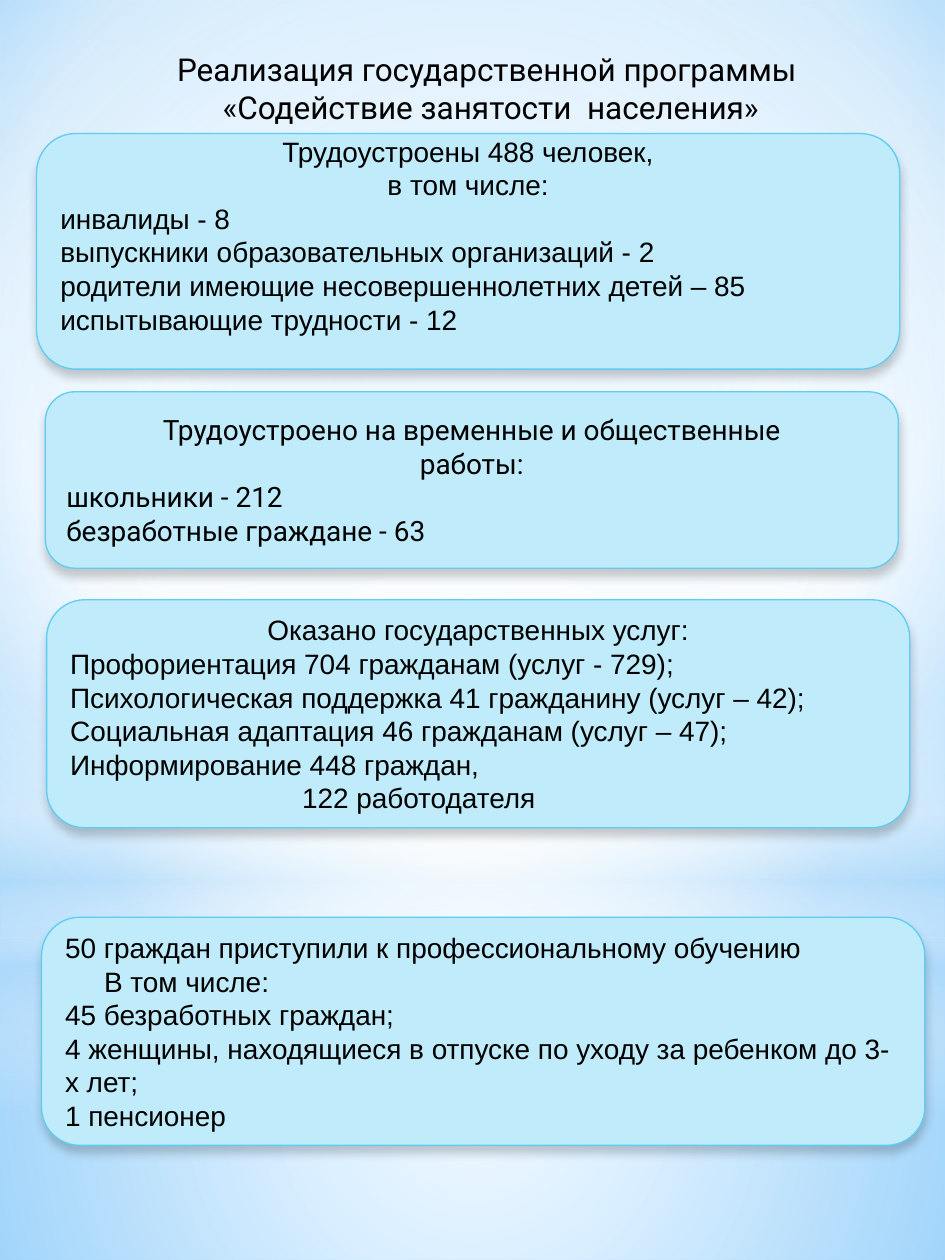
from lxml import etree
from pptx import Presentation
from pptx.dml.color import RGBColor
from pptx.enum.shapes import MSO_SHAPE as SHAPE
from pptx.enum.text import MSO_ANCHOR as ANCHOR, MSO_AUTO_SIZE as AUTO_SIZE, PP_ALIGN as ALIGN
from pptx.oxml.ns import qn
from pptx.util import Inches, Pt

BLACK = RGBColor(0x00, 0x00, 0x00)
WHITE = RGBColor(0xFF, 0xFF, 0xFF)
PANEL = RGBColor(0xBF, 0xEB, 0xFA)
BORDER = RGBColor(0x5E, 0xCC, 0xF3)
HAZE = RGBColor(0xB4, 0xDC, 0xFA)
SKY = RGBColor(0x9E, 0xD5, 0xFF)
DEEP_SKY = RGBColor(0x5B, 0xB9, 0xFF)
CENTER = (50, 50, 50, 50)
TITLE_ONLY = 5


def add_color(parent, color, alpha):
    node = etree.SubElement(parent, qn("a:srgbClr"), val=str(color))
    etree.SubElement(node, qn("a:alpha"), val=str(alpha * 1000))


def set_gradient(properties, stops, focus=None):
    """Swap a solid fill for a gradient: circular around focus, else downwards."""
    gradient = etree.Element(qn("a:gradFill"), rotWithShape="1")
    stop_list = etree.SubElement(gradient, qn("a:gsLst"))
    for position, color, alpha in stops:
        stop = etree.SubElement(stop_list, qn("a:gs"), pos=str(position * 1000))
        add_color(stop, color, alpha)
    if focus:
        circle = etree.SubElement(gradient, qn("a:path"), path="circle")
        sides = {side: str(value * 1000) for side, value in zip("ltrb", focus)}
        etree.SubElement(circle, qn("a:fillToRect"), **sides)
    else:
        etree.SubElement(gradient, qn("a:lin"), ang="5400000", scaled="0")
    properties.replace(properties.find(qn("a:solidFill")), gradient)


class Poster:
    def __init__(self, slide):
        self.slide = slide

    def background(self, stops, focus):
        self.slide.background.fill.solid()
        set_gradient(self.slide.element.find(".//" + qn("p:bgPr")), stops, focus)

    def glow(self, kind, top, height, stops, focus=None):
        glow = self.slide.shapes.add_shape(
            kind, 0, Inches(top), Inches(7.5), Inches(height))
        glow.shadow.inherit = False
        glow.fill.solid()
        set_gradient(glow.element.spPr, stops, focus)
        glow.line.fill.background()

    def fill_text(self, frame, lines, font, size, centered, indents=None):
        frame.word_wrap = True
        frame.text = "\n".join(lines)
        for index, paragraph in enumerate(frame.paragraphs):
            paragraph.alignment = ALIGN.CENTER if index < centered else ALIGN.LEFT
            if indents and index in indents:
                paragraph._p.get_or_add_pPr().set("marL", str(Inches(indents[index])))
            for run in paragraph.runs:
                run.font.name = font
                run.font.size = Pt(size)
                run.font.color.rgb = BLACK

    def title(self, box, lines):
        title = self.slide.shapes.title
        title.left, title.top, title.width, title.height = map(Inches, box)
        self.fill_text(title.text_frame, lines, "Roboto", 18, len(lines))
        title.text_frame.vertical_anchor = ANCHOR.TOP
        title.text_frame.auto_size = AUTO_SIZE.SHAPE_TO_FIT_TEXT
        # Lift the title above the glows
        title.element.getparent().append(title.element)

    def panel(self, box, lines, font="Arial", centered=0, indents=None, bottom=0.05):
        panel = self.slide.shapes.add_shape(
            SHAPE.ROUNDED_RECTANGLE, *map(Inches, box))
        panel.fill.solid()
        panel.fill.fore_color.rgb = PANEL
        panel.line.color.rgb = BORDER
        panel.line.width = Pt(0.75)
        panel.shadow.inherit = False
        effects = panel.element.spPr.find(qn("a:effectLst"))
        shadow = etree.SubElement(
            effects, qn("a:outerShdw"), blurRad=str(Pt(5)), dist=str(Pt(4)),
            dir="5400000", rotWithShape="0")
        add_color(shadow, BLACK, 20)
        panel.text_frame.vertical_anchor = ANCHOR.MIDDLE
        panel.text_frame.margin_bottom = Inches(bottom)
        self.fill_text(panel.text_frame, lines, font, 16, centered, indents)


def main():
    prs = Presentation()
    prs.slide_width, prs.slide_height = Inches(7.5), Inches(10)
    poster = Poster(prs.slides.add_slide(prs.slide_layouts[TITLE_ONLY]))

    # Sky backdrop with soft glows
    poster.background([(0, SKY, 100), (60, WHITE, 100), (100, DEEP_SKY, 100)],
                      (20, 10, 20, 60))
    poster.glow(SHAPE.RECTANGLE, 7.44, 2.56,
                [(0, WHITE, 91), (37, WHITE, 76), (100, HAZE, 79)], CENTER)
    poster.glow(SHAPE.RECTANGLE, 0, 7.44,
                [(0, WHITE, 89), (48, WHITE, 62), (100, HAZE, 79)], CENTER)
    poster.glow(SHAPE.RECTANGLE, 5.49, 3.33,
                [(0, WHITE, 0), (29, WHITE, 30), (45, HAZE, 40),
                 (55, WHITE, 26), (65, HAZE, 60), (100, WHITE, 0)])
    poster.glow(SHAPE.OVAL, 2.33, 7.44, [(0, WHITE, 100), (56, WHITE, 0)], CENTER)

    # Title
    poster.title((0.52, 0.35, 6.69, 0.71), [
        "Реализация государственной программы",
        " «Содействие занятости  населения»"])

    # Employed people
    poster.panel((0.29, 1.06, 6.85, 1.87), [
        "Трудоустроены 488 человек,",
        "в том числе:",
        "инвалиды - 8",
        "выпускники образовательных организаций - 2",
        "родители имеющие несовершеннолетних детей – 85",
        "испытывающие трудности - 12"], centered=2, bottom=0.31)

    # Temporary and public works
    poster.panel((0.36, 3.11, 6.77, 1.4), [
        "Трудоустроено на временные и общественные",
        "работы:",
        "школьники - 212",
        "безработные граждане - 63"], font="Roboto", centered=2)

    # Public services
    poster.panel((0.37, 4.76, 6.85, 1.81), [
        "Оказано государственных услуг:",
        "Профориентация 704 гражданам (услуг - 729);",
        "Психологическая поддержка 41 гражданину (услуг – 42);",
        "Социальная адаптация 46 гражданам (услуг – 47);",
        "Информирование 448 граждан,",
        "122 работодателя"], centered=1, indents={5: 1.84})

    # Vocational training
    poster.panel((0.33, 7.28, 7.01, 1.81), [
        "50 граждан приступили к профессиональному обучению",
        "В том числе:",
        "45 безработных граждан;",
        "4 женщины, находящиеся в отпуске по уходу за ребенком до 3-х лет;",
        "1 пенсионер"], indents={1: 0.31})

    prs.save("out.pptx")


if __name__ == "__main__":
    main()
